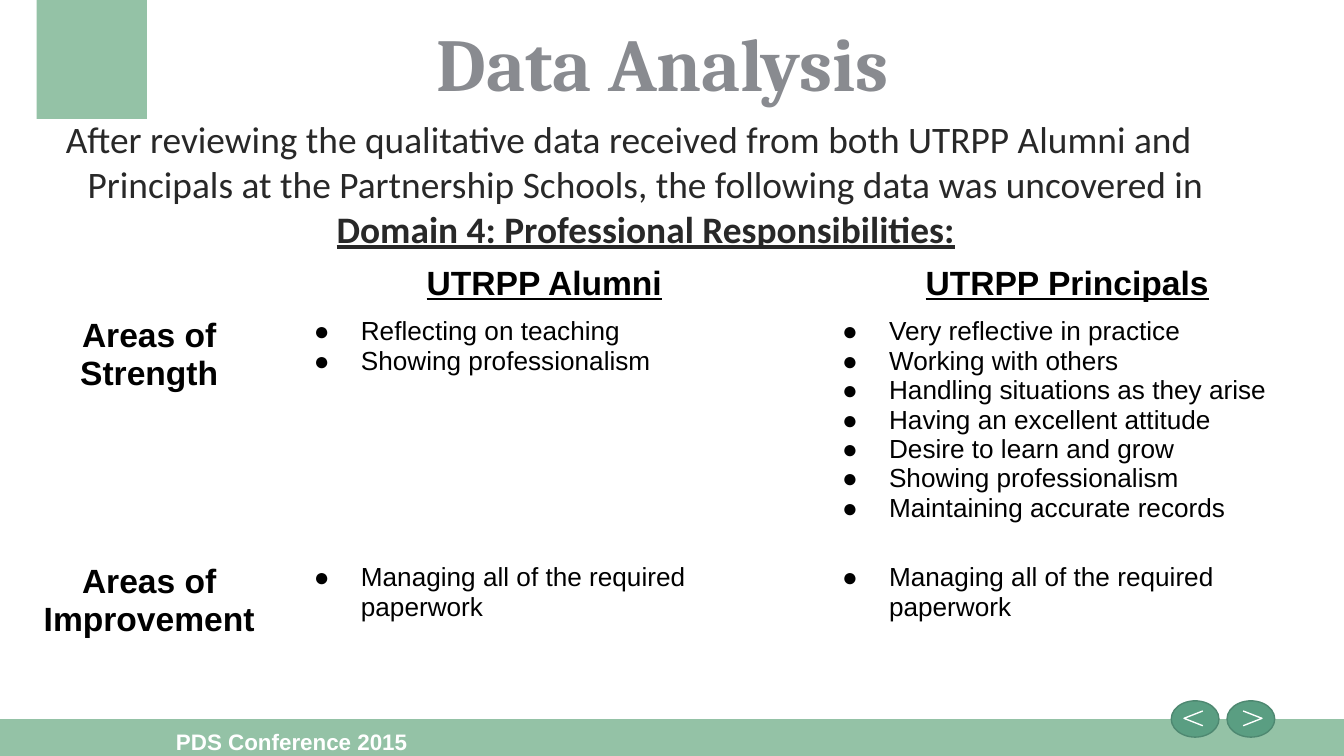
from dataclasses import dataclass
from typing import NamedTuple

from pptx import Presentation
from pptx.dml.color import RGBColor
from pptx.enum.shapes import MSO_SHAPE as Preset
from pptx.enum.text import MSO_ANCHOR as Anchor, MSO_AUTO_SIZE as AutoSize, PP_ALIGN as Align
from pptx.oxml.ns import qn
from pptx.oxml.xmlchemy import OxmlElement
from pptx.util import Inches, Pt

COLUMNS, ROWS = 100, 56.25
GREEN, BUTTON, BUTTON_EDGE = "94C2A6", "5A9E82", "4E8871"
WHITE, BLACK, GREY, DARK = "FFFFFF", "000000", "898B90", "282828"
PLAIN_TABLE = "{2D5ABB26-0587-4C30-8999-92F81FD0307C}"
HEADING = {"name": "Arial", "size": Pt(18), "bold": True, "underline": True}
LABEL = {**HEADING, "underline": False}
ITEM = {**LABEL, "size": Pt(14), "bold": False}
INTRO = {"name": "Calibri", "size": Pt(20), "bold": False, "underline": False}
DOMAIN = {**INTRO, "bold": True, "underline": True}


class Area(NamedTuple):
    column: float
    row: float
    width: float
    height: float


@dataclass
class Button:
    area: Area
    tip: float
    back: float


@dataclass
class Finding:
    label: str
    alumni: list[str]
    principals: list[str]


BANDS = [Area(2.73, 0, 8.2, 8.85), Area(0, 53.5, COLUMNS, 2.75)]
BUTTONS = [
    Button(Area(87.15, 52.15, 3.55, 2.7), 88.1, 89.5),
    Button(Area(91.3, 52.15, 3.55, 2.7), 93.9, 92.5),
]
FINDINGS = [
    Finding(
        "Areas of Strength",
        ["Reflecting on teaching", "Showing professionalism"],
        [
            "Very reflective in practice",
            "Working with others",
            "Handling situations as they arise",
            "Having an excellent attitude",
            "Desire to learn and grow",
            "Showing professionalism",
            "Maintaining accurate records",
        ],
    ),
    Finding(
        "Areas of Improvement",
        ["Managing all of the required paperwork"],
        ["Managing all of the required paperwork"],
    ),
]


def grid(steps: float) -> int:
    return Inches(steps / 10)


def place(area: Area) -> list[int]:
    return [grid(steps) for steps in area]


def colour(code: str) -> RGBColor:
    return RGBColor.from_string(code)


def set_all(target, values: dict) -> None:
    for name, value in values.items():
        setattr(target, name, value)


def add_span(para, text: str, style: dict, code: str) -> None:
    span = para.add_run()
    span.text = text
    set_all(span.font, style)
    span.font.color.rgb = colour(code)


def add_element(parent, tag: str, **attributes: str):
    element = OxmlElement(tag)
    for name, value in attributes.items():
        element.set(name, value)
    parent.append(element)
    return element


def indent(para, margin: float, first: float, bullet: str = "") -> None:
    properties = para._p.get_or_add_pPr()
    properties.set("marL", str(Inches(margin)))
    properties.set("indent", str(Inches(first)))
    if bullet:
        add_element(add_element(properties, "a:buClr"), "a:srgbClr", val=BLACK)
        add_element(properties, "a:buFont", typeface="Arial")
        add_element(properties, "a:buChar", char=bullet)
    else:
        add_element(properties, "a:buNone")


def set_frame(shape, area: Area, anchor: Anchor, inset: float):
    set_all(shape, dict(zip(("left", "top", "width", "height"), place(area))))
    sides = ("margin_left", "margin_top", "margin_right", "margin_bottom")
    frame = shape.text_frame
    set_all(frame, {"word_wrap": True, "auto_size": AutoSize.NONE, "vertical_anchor": anchor})
    set_all(frame, dict.fromkeys(sides, Inches(inset)))
    return frame.paragraphs[0]


def add_preset(page, kind: Preset, area: Area, fill: str, edge: str = "") -> None:
    shape = page.shapes.add_shape(kind, *place(area))
    shape.shadow.inherit = False
    shape.fill.solid()
    shape.fill.fore_color.rgb = colour(fill)
    if edge:
        shape.line.color.rgb = colour(edge)
        shape.line.width = Pt(0.75)
    else:
        shape.line.fill.background()


def add_button(page, button: Button) -> None:
    add_preset(page, Preset.OVAL, button.area, BUTTON, BUTTON_EDGE)
    top, middle, bottom = 52.9, 53.45, 54
    builder = page.shapes.build_freeform(grid(button.back), grid(top))
    points = [(button.tip, middle), (button.back, bottom)]
    builder.add_line_segments([(grid(x), grid(y)) for x, y in points], close=False)
    chevron = builder.convert_to_shape()
    chevron.shadow.inherit = False
    chevron.fill.background()
    chevron.line.color.rgb = colour(WHITE)
    chevron.line.width = Pt(0.75)


def fill_heading(cell, text: str, style: dict) -> None:
    para = cell.text_frame.paragraphs[0]
    para.alignment = Align.CENTER
    add_span(para, text, style, BLACK)


def fill_list(cell, items: list[str]) -> None:
    frame = cell.text_frame
    for number, item in enumerate(items):
        para = frame.add_paragraph() if number else frame.paragraphs[0]
        indent(para, 0.5, -0.35, "●")
        add_span(para, item, ITEM, BLACK)


def add_findings(page, findings: list[Finding]) -> None:
    widths, heights = (19.5, 39.3, 38.5), (3.9, 18.3, 11.9)
    area = Area(1.35, 19.2, sum(widths), sum(heights))
    table = page.shapes.add_table(len(heights), len(widths), *place(area)).table
    set_all(table, {"first_row": False, "horz_banding": False})
    table._tbl.tblPr.find(qn("a:tableStyleId")).text = PLAIN_TABLE
    for column, width in zip(table.columns, widths):
        column.width = grid(width)
    for row, height in zip(table.rows, heights):
        row.height = grid(height)
    for cell in table.iter_cells():
        cell.fill.background()
    for column, heading in enumerate(("", "UTRPP Alumni", "UTRPP Principals")):
        fill_heading(table.cell(0, column), heading, HEADING)
    for row, finding in enumerate(findings, 1):
        fill_heading(table.cell(row, 0), finding.label, LABEL)
        fill_list(table.cell(row, 1), finding.alumni)
        fill_list(table.cell(row, 2), finding.principals)


def main() -> None:
    deck = Presentation()
    deck.slide_width, deck.slide_height = grid(COLUMNS), grid(ROWS)
    page = deck.slides.add_slide(deck.slide_layouts[1])
    for band in BANDS:
        add_preset(page, Preset.RECTANGLE, band, GREEN)
    footer_area = Area(13.1, 54.2, 32.7, 4)
    footer = page.shapes.add_textbox(*place(footer_area))
    para = set_frame(footer, footer_area, Anchor.TOP, 0)
    add_span(para, "PDS Conference 2015", {**LABEL, "size": Pt(12)}, WHITE)
    for button in BUTTONS:
        add_button(page, button)
    para = set_frame(page.shapes.title, Area(0, 0, 98.65, 8.95), Anchor.BOTTOM, 0.1)
    para.alignment = Align.CENTER
    add_span(para, "Data Analysis", {"name": "Cambria", "size": Pt(40), "bold": True}, GREY)
    para = set_frame(page.placeholders[1], Area(0, 7.65, 92.3, 47.3), Anchor.TOP, 0.1)
    indent(para, 0.38, -0.25)
    set_all(para, {"alignment": Align.CENTER, "space_before": Pt(0)})
    intro = (
        "After reviewing the qualitative data received from both UTRPP Alumni and "
        "Principals at the Partnership Schools, the following data was uncovered in "
    )
    add_span(para, intro, INTRO, DARK)
    add_span(para, "Domain 4: Professional Responsibilities:", DOMAIN, DARK)
    add_findings(page, FINDINGS)
    deck.save("out.pptx")


if __name__ == "__main__":
    main()
